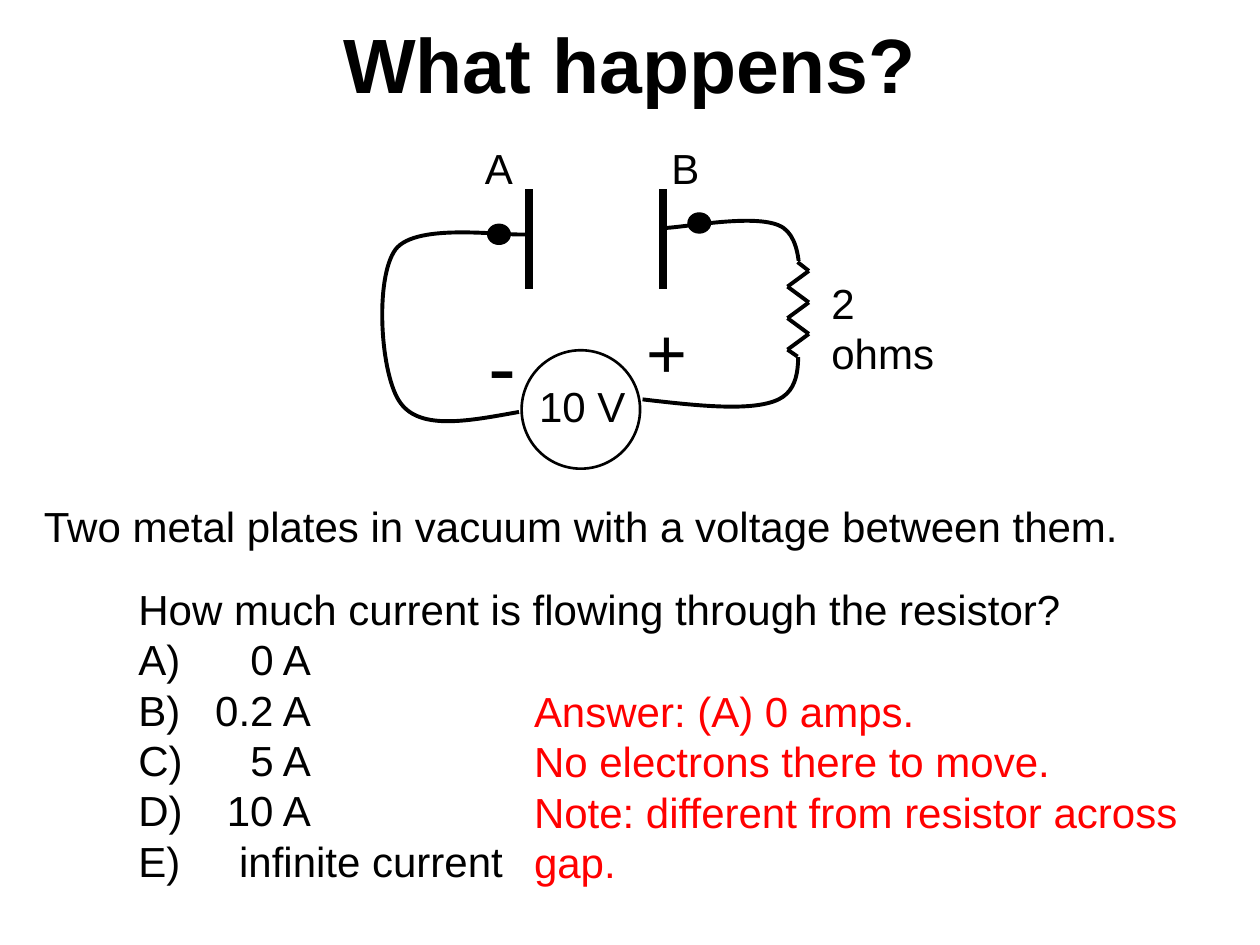
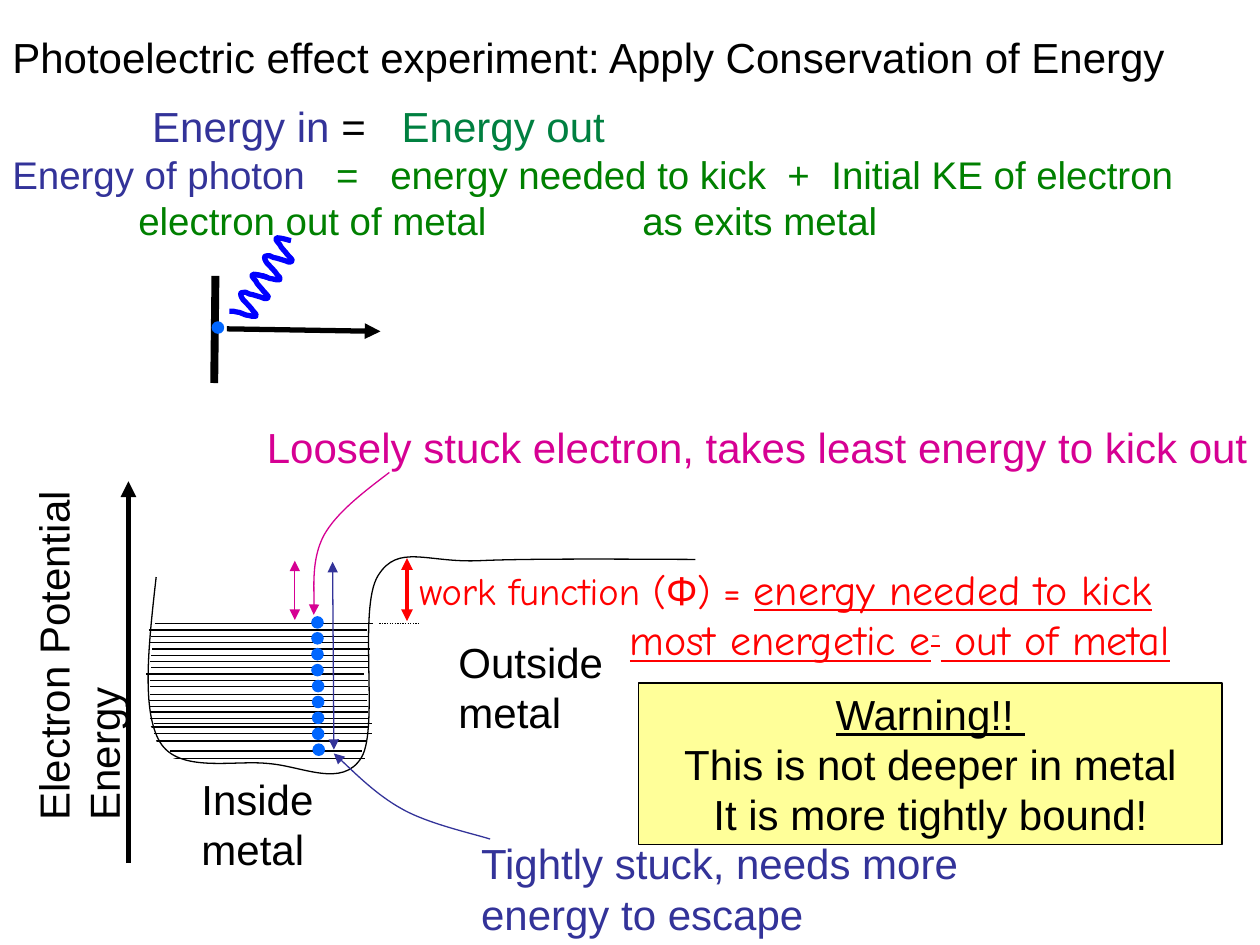
from itertools import pairwise

from lxml.etree import SubElement
from pptx import Presentation
from pptx.dml.color import RGBColor
from pptx.enum.dml import MSO_LINE
from pptx.enum.shapes import MSO_CONNECTOR, MSO_SHAPE
from pptx.enum.text import MSO_ANCHOR, PP_ALIGN
from pptx.oxml.ns import qn
from pptx.util import Pt

PX = 9144
BLACK, WHITE, RED = "000000", "FFFFFF", "FF0000"
PINK, INDIGO, GREEN, SEA_GREEN = "D60093", "333399", "008000", "008040"
WAVE_BLUE, ELECTRON_BLUE, YELLOW = "0000FF", "0066FF", "FFFF99"
BODY_FONT, HAND_FONT, SYMBOL_FONT = "Arial", "Comic Neue", "Noto Sans"
LINE_BREAK = ("\n", {})


def color(value):
    """Return the colour for a hex string."""
    return RGBColor.from_string(value)


def emu(*lengths):
    """Turn px lengths into EMU."""
    return [round(length * PX) for length in lengths]


class Board:
    """Holds the shared style and the slide being drawn."""

    style = {"name": BODY_FONT, "size": 24, "color": BLACK}

    def __init__(self):
        """Open a presentation of 10 by 7.5 inches."""
        self.presentation = Presentation()
        self.presentation.slide_width, self.presentation.slide_height = emu(1000, 750)
        self.slide = None

    def new_slide(self):
        """Start a blank slide."""
        self.slide = self.presentation.slides.add_slide(self.presentation.slide_layouts[6])

    def format_run(self, run, values):
        """Apply font values to a run."""
        values = self.style | values
        run.font.color.rgb = color(values.pop("color"))
        values["size"] = Pt(values["size"])
        baseline = values.pop("baseline", None)
        for name, value in values.items():
            setattr(run.font, name, value)
        if baseline:
            run._r.get_or_add_rPr().set("baseline", str(baseline))

    def fill_text(self, shape, paragraphs, tabs=(), align=PP_ALIGN.LEFT,
                  anchor=MSO_ANCHOR.TOP, wrap=True, **values):
        """Write paragraphs, each a string or a list of (text, values) runs."""
        frame = shape.text_frame
        frame.word_wrap = wrap
        frame.vertical_anchor = anchor
        for index, runs in enumerate(paragraphs):
            paragraph = frame.add_paragraph() if index else frame.paragraphs[0]
            paragraph.alignment = align
            if index < len(tabs) and tabs[index]:
                stops = SubElement(paragraph._p.get_or_add_pPr(), qn("a:tabLst"))
                for side, position in tabs[index]:
                    SubElement(stops, qn("a:tab"), pos=str(position * PX), algn=side)
            for text, changes in [(runs, {})] if isinstance(runs, str) else runs:
                if text == "\n":
                    paragraph.add_line_break()
                    continue
                run = paragraph.add_run()
                run.text = text
                self.format_run(run, values | changes)

    def text(self, box, *paragraphs, rotation=0, **values):
        """Add a text box."""
        shape = self.slide.shapes.add_textbox(*emu(*box))
        shape.rotation = rotation
        self.fill_text(shape, paragraphs, **values)

    def paint(self, shape, fill=None, line=None, width=0.75):
        """Set fill and outline of a shape."""
        shape.shadow.inherit = False
        for part, value in ((shape.fill, fill), (shape.line.fill, line)):
            if value:
                part.solid()
                part.fore_color.rgb = color(value)
            else:
                part.background()
        if line:
            shape.line.width = Pt(width)

    def arrowheads(self, shape, ends):
        """Put triangles on the named ends of a line."""
        for end in ends:
            SubElement(shape.line._get_or_add_ln(), qn(f"a:{end}End"), type="triangle")

    def shape(self, kind, box, **paint):
        """Add a preset shape."""
        shape = self.slide.shapes.add_shape(kind, *emu(*box))
        self.paint(shape, **paint)
        return shape

    def line(self, start, end, stroke=BLACK, width=0.75, ends=(), dash=None):
        """Add a straight line."""
        shape = self.slide.shapes.add_connector(
            MSO_CONNECTOR.STRAIGHT, *emu(*start, *end))
        shape.line.color.rgb = color(stroke)
        shape.line.width = Pt(width)
        if dash:
            shape.line.dash_style = dash
        SubElement(shape._element.spPr, qn("a:effectLst"))
        self.arrowheads(shape, ends)

    def curve(self, points, ends=(), close=False, **paint):
        """Add an outline of cubic curves that share their end points."""
        first, *others = [emu(*point) for point in points]
        builder = self.slide.shapes.build_freeform(*first)
        builder.add_line_segments(others, close=close)
        shape = builder.convert_to_shape()
        segments = list(shape._element.iter(qn("a:lnTo")))
        for start in range(0, len(segments), 3):
            cubic, *extras = segments[start:start + 3]
            for extra in extras:
                cubic.append(extra[0])
                extra.getparent().remove(extra)
            cubic.tag = qn("a:cubicBezTo")
        self.paint(shape, **paint)
        self.arrowheads(shape, ends)


def draw_circuit(board):
    """Draw the plates, wires, source and resistor."""
    board.shape(MSO_SHAPE.OVAL, (414, 278, 94, 94), line=BLACK, width=1.5)
    board.text((418, 297, 108, 51), "10 V")
    left_wire = [(412, 327), (373, 334), (334, 342), (318, 320), (302, 299),
                 (297, 221), (314, 198), (331, 176), (402, 188), (420, 186)]
    right_wire = [(510, 317), (553, 322), (597, 327), (618, 317), (638, 307),
                  (633, 281), (633, 258), (634, 236), (640, 194), (622, 181),
                  (604, 168), (542, 181), (526, 181)]
    for wire in (left_wire, right_wire):
        board.curve(wire, line=BLACK, width=2.25)
    for name, label_left, dot_left, dot_top, plate in (
            ("A", 375, 387, 178, 420), ("B", 523, 546, 169, 526)):
        board.text((label_left, 108, 40, 51), name)
        board.shape(MSO_SHAPE.OVAL, (dot_left, dot_top, 18, 16), fill=BLACK, line=BLACK)
        board.line((plate, 150), (plate, 229), width=4.5)
    board.text((503, 240, 48, 77), "+", size=40)
    board.text((378, 244, 41, 91), "-", size=48)
    board.text((650, 215, 120, 50), "2 ohms")
    board.shape(MSO_SHAPE.RECTANGLE, (617, 208, 33, 75), fill=WHITE, line=WHITE, width=1)
    teeth = [(625 if tooth % 2 else 642, 215 + 12.5 * tooth) for tooth in range(6)]
    for start, end in pairwise([(633, 208), *teeth, (633, 283)]):
        board.line(start, end, width=2.25)


def question_slide(board):
    """Build the question about the current."""
    board.new_slide()
    board.text((0, 0, 1000, 100), "What happens?", size=44, bold=True,
               align=PP_ALIGN.CENTER, anchor=MSO_ANCHOR.MIDDLE)
    board.text((25, 392, 975, 50), "Two metal plates in vacuum with a voltage between them.")
    board.text((100, 458, 900, 252), "How much current is flowing through the resistor?",
               "A)\t0 A", "B)\t0.2 A", "C)\t5 A", "D)\t10 A", "E)\tinfinite current",
               tabs=[[], *[[("r", 137)]] * 4, [("l", 80)]])
    draw_circuit(board)
    board.text((414, 539, 563, 131), "Answer: (A) 0 amps.", "No electrons there to move.",
               "Note: different from resistor across gap.", color=RED)


def draw_well(board):
    """Draw the potential well with its levels and electrons."""
    board.curve([(124, 458), (118, 511), (112, 564), (127, 589), (142, 614), (186, 603),
                 (213, 606), (240, 608), (272, 626), (287, 601), (301, 577), (284, 483),
                 (300, 457), (316, 431), (339, 447), (381, 445), (423, 443), (524, 444),
                 (552, 444)], line=BLACK)
    board.line((102, 685), (102, 382), width=3, ends=["tail"])
    lefts = [123, 118, 120, 119, 121, 120, 119, 120, 116, 119, 119,
             119, 118, 119, 119, 119, 122, 119, 122, 118, 117]
    tops = [*range(495, 550, 5), 551, 556, 561, 565, 570, 574, 577, 582, 588, 602]
    for left, top in zip(lefts, tops):
        board.line((left, top), (left + 173, top))
    board.line((135, 596), (287, 596))
    for electron in range(9):
        board.shape(MSO_SHAPE.OVAL, (247 + electron // 4 / 2, 489 + 12.63 * electron, 10, 10),
                    fill=ELECTRON_BLUE)
    board.line((301, 495), (333, 495), dash=MSO_LINE.ROUND_DOT)
    board.curve([(118, 575), (121, 574), (124, 593), (129, 598), (135, 603), (156, 605),
                 (153, 607), (150, 608), (117, 613), (111, 608), (105, 603), (115, 577),
                 (118, 575)], close=True, fill=WHITE)


def draw_photon(board):
    """Draw the metal plate, the photon and the leaving electron."""
    board.line((171, 219), (170, 304), width=4.5)
    wave = [(182, 247), (182, 247), (184, 247), (185, 247), (186, 247), (188, 248),
            (190, 248), (192, 249), (193, 249), (195, 250), (197, 250), (199, 251),
            (200, 251), (202, 251), (203, 251), (203, 251), (204, 250), (203, 249),
            (201, 247), (200, 245), (195, 240), (193, 238), (191, 235), (191, 234),
            (191, 233), (191, 232), (194, 232), (195, 232), (197, 233), (199, 234),
            (201, 234), (204, 235), (208, 236), (210, 237), (211, 237), (213, 237),
            (213, 236), (213, 235), (211, 233), (209, 231), (208, 229), (204, 226),
            (203, 223), (201, 221), (200, 219), (200, 219), (200, 218), (201, 217),
            (203, 218), (205, 218), (211, 220), (212, 220)]
    for half in range(2):
        board.curve([(x + 19 * half, y - 29 * half) for x, y in wave],
                    line=WAVE_BLUE, width=3)
    board.shape(MSO_SHAPE.OVAL, (168, 255, 10, 10), fill=ELECTRON_BLUE)
    board.line((180, 261), (302, 263), width=3, ends=["tail"])


def energy_slide(board):
    """Build the energy balance of the photoelectric effect."""
    board.new_slide()
    board.text((0, 20, 1000, 50),
               "Photoelectric effect experiment: Apply Conservation of Energy")
    draw_well(board)
    draw_photon(board)
    small = {"size": 22}
    board.text((0, 75, 1000, 123),
               [("\tEnergy in ", {"color": INDIGO}), ("=\t", {"color": BLACK}),
                ("Energy out", {"color": SEA_GREEN})],
               [("Energy of photon", small | {"color": INDIGO}),
                ("\t=\tenergy needed to kick\t+\tInitial KE of electron", small),
                LINE_BREAK, ("\telectron out of metal\tas exits metal", small)],
               tabs=[[("l", 111), ("l", 309)],
                     [("l", stop) for stop in (100, 257, 300, 500, 615, 650)]],
               color=GREEN)

    both = ["head", "tail"]
    board.line((323, 443), (323, 493), RED, 2.25, both)
    board.line((234, 445), (234, 492), PINK, ends=both)
    board.line((264, 446), (265, 595), INDIGO, ends=both)
    underlined = {"underline": True}
    board.text((323, 442, 658, 91),
               [("work function (", small), ("Φ", small | {"name": SYMBOL_FONT}),
                (") = ", small), ("energy needed to kick", underlined)],
               [("\t", {}), ("most energetic e", underlined),
                ("-", underlined | {"baseline": 30000}), (" out of metal", underlined)],
               tabs=[[], [("l", 167)]], name=HAND_FONT, color=RED)

    board.curve([(309, 375), (288, 391), (267, 407), (257, 425), (247, 444), (250, 477),
                 (249, 488)], line=PINK, ends=["tail"])
    board.text((202, 330, 798, 50), "Loosely stuck electron, takes least energy to kick out",
               color=PINK, wrap=False)
    board.curve([(265, 598), (274, 606), (299, 631), (319, 642), (340, 654), (377, 662),
                 (389, 666)], line=INDIGO, ends=["head"])
    board.text((372, 660, 476, 90), "Tightly stuck, needs more energy to escape", color=INDIGO)

    board.text((150, 609, 118, 90), "Inside", "metal")
    board.text((354, 500, 144, 90), "Outside", "metal")
    board.text((-81, 473, 286, 90), "Electron Potential", "Energy", rotation=270)
    warning = board.shape(MSO_SHAPE.RECTANGLE, (507, 542, 463, 128), fill=YELLOW, line=BLACK)
    board.fill_text(warning, [[("Warning!! ", underlined), LINE_BREAK,
                               ("This is not deeper in metal", {})],
                              "It is more tightly bound!"],
                    align=PP_ALIGN.CENTER, anchor=MSO_ANCHOR.MIDDLE)


def main():
    """Build both slides and save them."""
    board = Board()
    question_slide(board)
    energy_slide(board)
    board.presentation.save("out.pptx")


if __name__ == "__main__":
    main()
